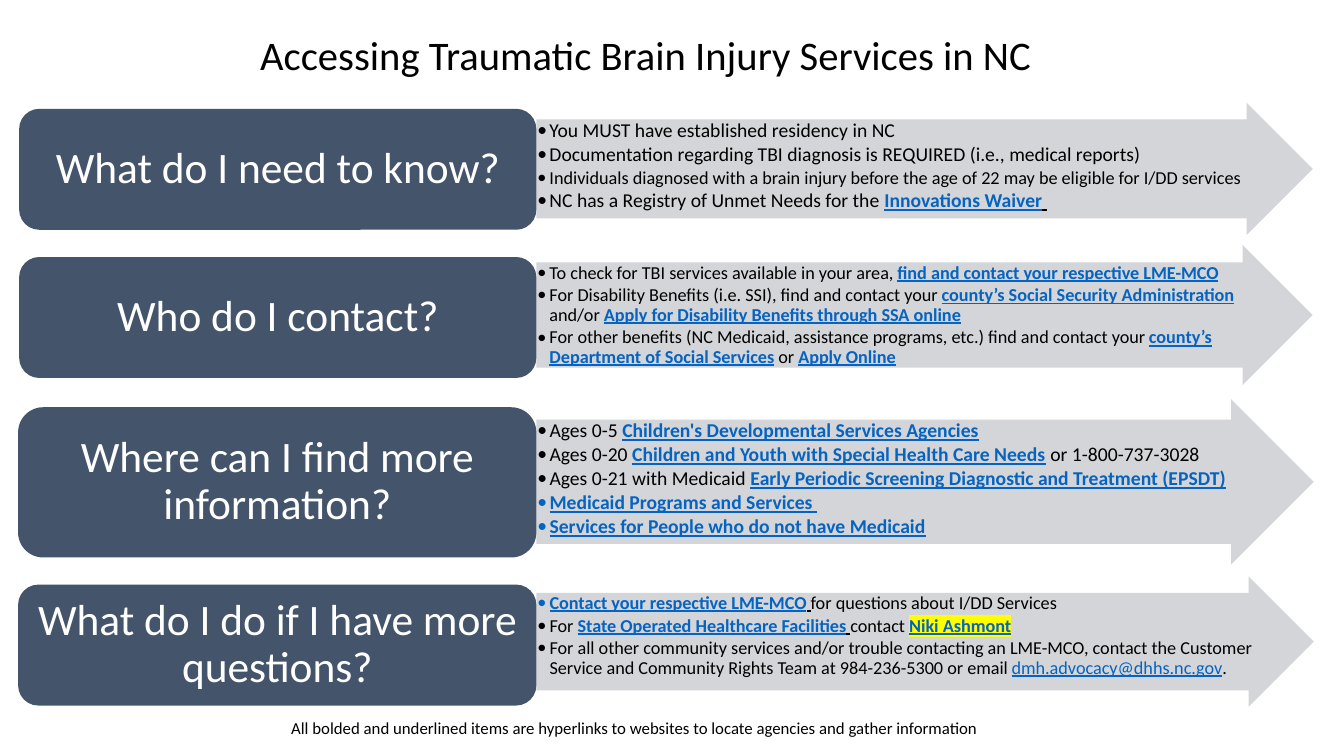
"""Build the slide on accessing traumatic brain injury services in NC."""
from dataclasses import dataclass
from typing import Any, NamedTuple

import pptx
import pptx.dml.color
import pptx.enum.shapes
import pptx.enum.text
import pptx.oxml
import pptx.oxml.ns
import pptx.util

RGBColor = pptx.dml.color.RGBColor
MSO_SHAPE = pptx.enum.shapes.MSO_SHAPE
MSO_ANCHOR = pptx.enum.text.MSO_ANCHOR
PP_ALIGN = pptx.enum.text.PP_ALIGN
qn = pptx.oxml.ns.qn

EMU_PER_PX = 9144
FONT = "Calibri"
BLACK = RGBColor(0x00, 0x00, 0x00)
WHITE = RGBColor(0xFF, 0xFF, 0xFF)
SLATE = RGBColor(0x44, 0x54, 0x6A)
SILVER = RGBColor(0xCF, 0xD1, 0xD4)
LINK_BLUE = RGBColor(0x05, 0x63, 0xC1)
YELLOW = RGBColor(0xFF, 0xFF, 0x00)


class Style(NamedTuple):
    """Look of a run of text."""
    color: RGBColor = BLACK
    bold: bool = False
    underline: bool = False
    highlight: RGBColor | None = None


PLAIN = Style()
HEADING = Style(WHITE)
LINK = Style(LINK_BLUE, True, True)
GAP = Style(BLACK, True, True)
MARKED = Style(LINK_BLUE, True, True, YELLOW)
MAIL = Style(LINK_BLUE, False, True)


class Run(NamedTuple):
    """Piece of text in one style."""
    text: str
    style: Style = PLAIN


class Box(NamedTuple):
    """Left, top, width and height in px."""
    x: int
    y: int
    w: int
    h: int


class Bullet(NamedTuple):
    """One bulleted paragraph."""
    size: int
    runs: list[Run]


@dataclass
class Row:
    """A question card and the arrow holding its answers."""
    question: str
    card: Box
    arrow: Box
    bullets: list[Bullet]


ROWS = [
    Row("What do I need to know?", Box(19, 108, 513, 120), Box(532, 102, 770, 131), [
        Bullet(14, [Run("You MUST have established residency in NC")]),
        Bullet(14, [Run("Documentation regarding TBI diagnosis is REQUIRED (i.e., medical reports)")]),
        Bullet(13, [Run("Individuals diagnosed with a brain injury before the age of 22 "
                        "may be eligible for I/DD services")]),
        Bullet(14, [Run("NC has a Registry of Unmet Needs for the "),
                    Run("Innovations Waiver", LINK), Run(" ", GAP)]),
    ]),
    Row("Who do I contact?", Box(19, 255, 513, 120), Box(532, 243, 770, 139), [
        Bullet(13, [Run("To check for TBI services available in your area, "),
                    Run("find and contact your respective LME-MCO", LINK)]),
        Bullet(13, [Run("For Disability Benefits (i.e. SSI), find and contact your "),
                    Run("county’s Social Security Administration", LINK), Run(" and/or "),
                    Run("Apply for Disability Benefits through SSA online", LINK)]),
        Bullet(13, [Run("For other benefits (NC Medicaid, assistance programs, etc.) "
                        "find and contact your "),
                    Run("county’s Department of Social Services", LINK), Run(" or "),
                    Run("Apply Online", LINK)]),
    ]),
    Row("Where can I find more information?", Box(18, 404, 514, 149), Box(532, 396, 771, 164), [
        Bullet(14, [Run("Ages 0-5 "), Run("Children's Developmental Services Agencies", LINK)]),
        Bullet(14, [Run("Ages 0-20 "),
                    Run("Children and Youth with Special Health Care Needs", LINK),
                    Run(" or 1-800-737-3028")]),
        Bullet(14, [Run("Ages 0-21 with Medicaid "),
                    Run("Early Periodic Screening Diagnostic and Treatment (EPSDT)", LINK)]),
        Bullet(14, [Run("Medicaid Programs and Services ", LINK)]),
        Bullet(14, [Run("Services for People who do not have Medicaid", LINK)]),
    ]),
    Row("What do I do if I have more questions?", Box(18, 580, 514, 120), Box(532, 572, 771, 129), [
        Bullet(13, [Run("Contact your respective LME-MCO", LINK), Run(" ", GAP),
                    Run("for questions about I/DD Services")]),
        Bullet(13, [Run("For "), Run("State Operated Healthcare Facilities", LINK),
                    Run(" ", GAP), Run("contact "), Run("Niki Ashmont", MARKED)]),
        Bullet(13, [Run("For all other community services and/or trouble contacting an LME-MCO, "
                        "contact the Customer Service and Community Rights Team at "
                        "984-236-5300 or email "),
                    Run("dmh.advocacy@dhhs.nc.gov", MAIL), Run(".")]),
    ]),
]


def px(n: float) -> int:
    """Turn px into EMU."""
    return round(n * EMU_PER_PX)


def make_xml(tag: str, attributes: str, inner: str = "") -> Any:
    """Make one DrawingML element."""
    return pptx.oxml.parse_xml(
        f'<a:{tag} {pptx.oxml.ns.nsdecls("a")} {attributes}>{inner}</a:{tag}>')


def apply(obj: Any, values: dict[str, Any]) -> None:
    """Set each named attribute on an object."""
    for name, value in values.items():
        setattr(obj, name, value)


def add_runs(p: Any, runs: list[Run], size: int) -> None:
    """Append styled runs to a paragraph."""
    for run in runs:
        r = p.add_run()
        r.text = run.text
        apply(r.font, {"name": FONT, "size": pptx.util.Pt(size),
                       "bold": run.style.bold, "underline": run.style.underline})
        r.font.color.rgb = run.style.color
        if run.style.highlight is not None:
            mark = make_xml("highlight", "", f'<a:srgbClr val="{run.style.highlight}"/>')
            r._r.get_or_add_rPr().find(qn("a:solidFill")).addnext(mark)


def set_frame(tf: Any, dx: int, dy: int, anchor: Any) -> None:
    """Set wrapping, insets and anchor of a text frame."""
    apply(tf, {"word_wrap": True, "vertical_anchor": anchor,
               "margin_left": px(dx), "margin_right": px(dx),
               "margin_top": px(dy), "margin_bottom": px(dy)})


def add_shape(s: Any, kind: Any, box: Box, color: RGBColor) -> Any:
    """Add a flat filled shape without outline."""
    sp = s.shapes.add_shape(kind, *map(px, box))
    sp.shadow.inherit = False
    sp.fill.solid()
    sp.fill.fore_color.rgb = color
    sp.line.fill.background()
    return sp


def add_centred(tf: Any, run: Run, size: int, spacing: float) -> None:
    """Write one centred paragraph in a frame."""
    p = tf.paragraphs[0]
    apply(p, {"alignment": PP_ALIGN.CENTER, "line_spacing": spacing})
    add_runs(p, [run], size)


def add_label(s: Any, box: Box, text: str, size: int, spacing: float) -> None:
    """Add a centred text box."""
    tf = s.shapes.add_textbox(*map(px, box)).text_frame
    set_frame(tf, 10, 5, MSO_ANCHOR.MIDDLE)
    add_centred(tf, Run(text), size, spacing)


def add_row(s: Any, row: Row) -> None:
    """Draw an arrow, its bullets and the question card."""
    arrow = add_shape(s, MSO_SHAPE.RIGHT_ARROW, row.arrow, SILVER)
    arrow.adjustments[0], arrow.adjustments[1] = 0.75, 0.5
    arrow._element.spPr.find(qn("a:solidFill"))[0].append(make_xml("alpha", 'val="90000"'))

    x, y, w, h = row.arrow
    tf = s.shapes.add_textbox(px(x), px(y + h / 8), px(w - h * 3 / 8), px(h * 3 / 4)).text_frame
    set_frame(tf, 1, 1, MSO_ANCHOR.TOP)
    for i, bullet in enumerate(row.bullets):
        p = tf.add_paragraph() if i else tf.paragraphs[0]
        pPr = p._p.get_or_add_pPr()
        apply(p, {"level": 1, "line_spacing": 0.9, "space_after": pptx.util.Pt(2)})
        pPr.set("marL", str(px(12)))
        pPr.set("indent", str(px(-12)))
        pPr.append(make_xml("buFont", f'typeface="{FONT}"'))
        pPr.append(make_xml("buChar", 'char="•"'))
        add_runs(p, bullet.runs, bullet.size)

    card = add_shape(s, MSO_SHAPE.ROUNDED_RECTANGLE, row.card, SLATE)
    set_frame(card.text_frame, 10, 6, MSO_ANCHOR.MIDDLE)
    add_centred(card.text_frame, Run(row.question, HEADING), 31, 0.9)


def main() -> None:
    """Build and save the slide."""
    prs = pptx.Presentation()
    apply(prs, {"slide_width": px(1333), "slide_height": px(750)})
    s = prs.slides.add_slide(prs.slide_layouts[6])
    add_label(s, Box(66, 1, 1150, 112), "Accessing Traumatic Brain Injury Services in NC", 29, 0.9)
    for row in ROWS:
        add_row(s, row)
    add_label(s, Box(261, 702, 737, 40), "All bolded and underlined items are hyperlinks "
              "to websites to locate agencies and gather information", 12, 1.0)
    prs.save("out.pptx")


if __name__ == "__main__":
    main()
